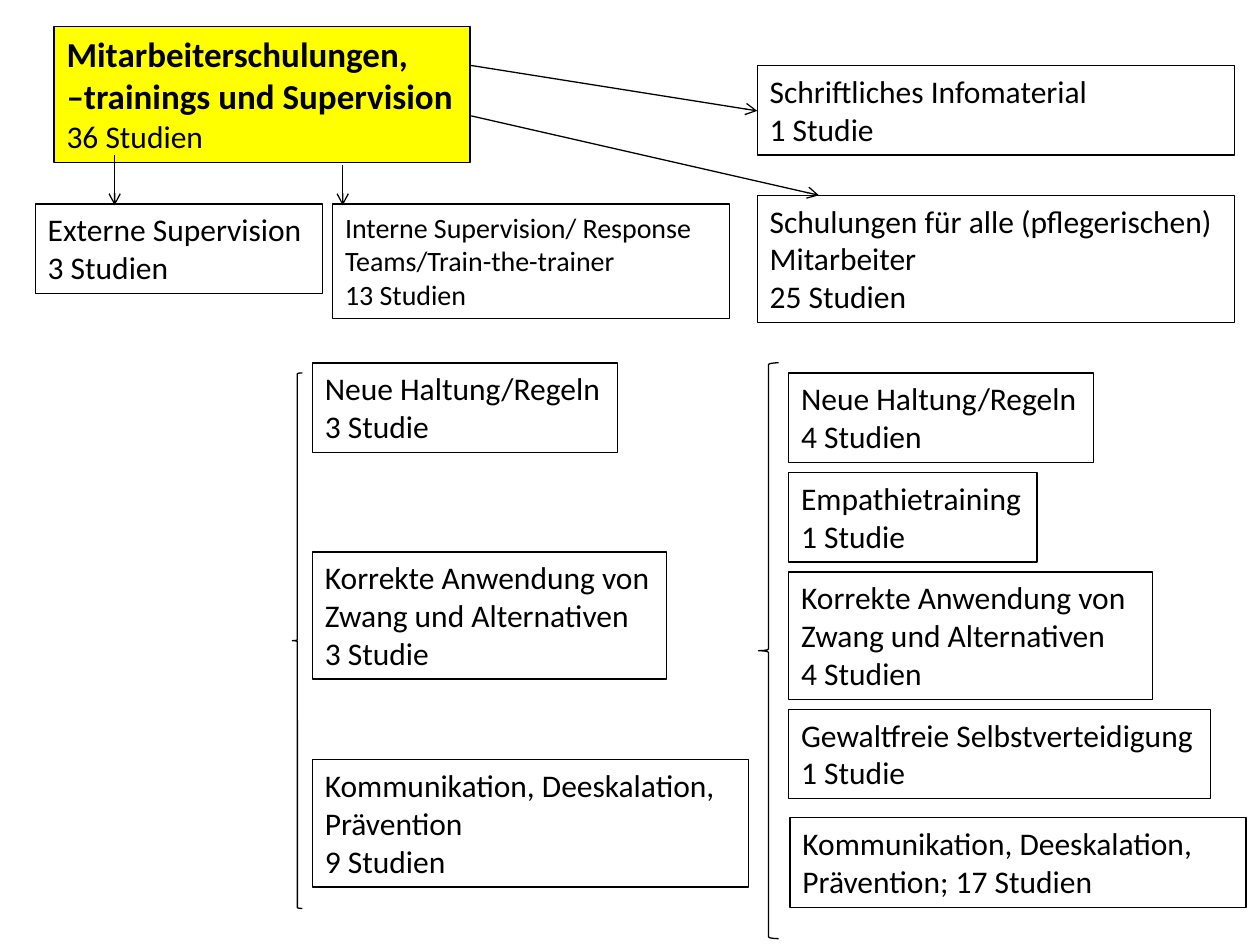
"""Build the slide on staff training and supervision studies."""
from lxml import etree
from pptx import Presentation
from pptx.dml.color import RGBColor
from pptx.enum.shapes import MSO_CONNECTOR, MSO_SHAPE
from pptx.enum.text import MSO_ANCHOR, MSO_AUTO_SIZE, PP_ALIGN
from pptx.oxml.ns import qn
from pptx.util import Inches, Pt

RECT, BRACE = MSO_SHAPE.RECTANGLE, MSO_SHAPE.LEFT_BRACE
STRAIGHT = MSO_CONNECTOR.STRAIGHT
TOP, LEFT = MSO_ANCHOR.TOP, PP_ALIGN.LEFT
GROW = MSO_AUTO_SIZE.SHAPE_TO_FIT_TEXT
BLACK, YELLOW = "000000", "FFFF00"
LOW, HIGH, GAP = 0.71, 1.01, 0.08
RIGHT = 6.01
COL_A, COL_B, START = 2.48, 6.26, 2.96

TITLE = ["Mitarbeiterschulungen,", "–trainings und Supervision", "36 Studien"]
RULES = "Neue Haltung/Regeln"
FORCE = ["Korrekte Anwendung von", "Zwang und Alternativen"]
TALK = "Kommunikation, Deeskalation,"

BOXES = [
    ((0.28, 1.62, 2.28, LOW), ["Externe Supervision", "3 Studien"], 18, True),
    ((2.64, 1.62, 3.15, 0.91),
     ["Interne Supervision/ Response Teams/Train-the-trainer", "13 Studien"], 16, True),
    ((RIGHT, 0.52, 3.79, LOW), ["Schriftliches Infomaterial", "1 Studie"], 18, True),
    ((RIGHT, 1.55, 3.79, HIGH),
     ["Schulungen für alle (pflegerischen) Mitarbeiter", "25 Studien"], 18, True),
    ((COL_A, 2.88, 2.42, LOW), [RULES, "3 Studie"], 18, False),
    ((COL_A, 4.38, 2.81, HIGH), FORCE + ["3 Studie"], 18, False),
    ((COL_A, 6.03, 3.46, HIGH), [TALK, "Prävention", "9 Studien"], 18, True),
    ((6.27, 6.49, 3.62, LOW), [TALK, "Prävention; 17 Studien"], 18, True),
]
STACK = [
    (2.42, [RULES, "4 Studien"]),
    (1.97, ["Empathietraining", "1 Studie"]),
    (2.89, FORCE + ["4 Studien"]),
    (3.35, ["Gewaltfreie Selbstverteidigung", "1 Studie"]),
]
BRACES = [(2.32, 2.96, 0.08, 4.25), (6.02, 2.88, 0.16, 4.57)]
ARROWS = [
    (2.72, 1.31, 2.72, 1.63),
    (3.74, 0.92, 6.5, 1.55),
    (3.74, 0.52, RIGHT, 0.88),
    (0.91, 1.23, 0.91, 1.63),
]


def color(code):
    """Turn a hex string into a colour."""
    return RGBColor.from_string(code)


def assign(target, values):
    """Set each named format value on the target."""
    for name, value in values.items():
        setattr(target, name, value)


def stroke(item):
    """Give a shape or connector its thin black line."""
    item.line.color.rgb = color(BLACK)
    item.line.width = Pt(0.75)


def outline(slide, kind, place, fill=None):
    """Add a preset shape with a black outline."""
    shape = slide.shapes.add_shape(kind, *map(Inches, place))
    shape.shadow.inherit = False
    stroke(shape)
    if fill:
        shape.fill.solid()
        shape.fill.fore_color.rgb = color(fill)
    else:
        shape.fill.background()
    return shape


def add_box(slide, place, lines, size, wrap, fill=None):
    """Add a framed text box and return its paragraphs."""
    frame = outline(slide, RECT, place, fill).text_frame
    frame.text = "\n".join(lines)
    assign(frame, {"word_wrap": wrap, "auto_size": GROW, "vertical_anchor": TOP})
    for para in frame.paragraphs:
        para.alignment = LEFT
        font = para.runs[0].font
        assign(font, {"name": "Calibri", "size": Pt(size)})
        font.color.rgb = color(BLACK)
    return frame.paragraphs


def add_arrow(slide, ends):
    """Add a straight line with an open arrowhead at its end."""
    line = slide.shapes.add_connector(STRAIGHT, *map(Inches, ends))
    stroke(line)
    etree.SubElement(line.line._get_or_add_ln(), qn("a:tailEnd"), type="arrow")
    etree.SubElement(line._element.spPr, qn("a:effectLst"))


def main():
    """Build and save the slide."""
    deck = Presentation()
    assign(deck, {"slide_width": Inches(10), "slide_height": Inches(7.5)})
    slide = deck.slides.add_slide(deck.slide_layouts[6])

    head = add_box(slide, (0.43, 0.21, 3.3, 1.08), TITLE, 20, False, YELLOW)
    for para in head[:2]:
        para.runs[0].font.bold = True
    head[2].runs[0].font.size = Pt(18)

    for box in BOXES:
        add_box(slide, *box)
    top = START
    for width, lines in STACK:
        height = HIGH if len(lines) == 3 else LOW
        add_box(slide, (COL_B, top, width, height), lines, 18, False)
        top += height + GAP

    for place in BRACES:
        outline(slide, BRACE, place)
    for ends in ARROWS:
        add_arrow(slide, ends)
    deck.save("out.pptx")


if __name__ == "__main__":
    main()
